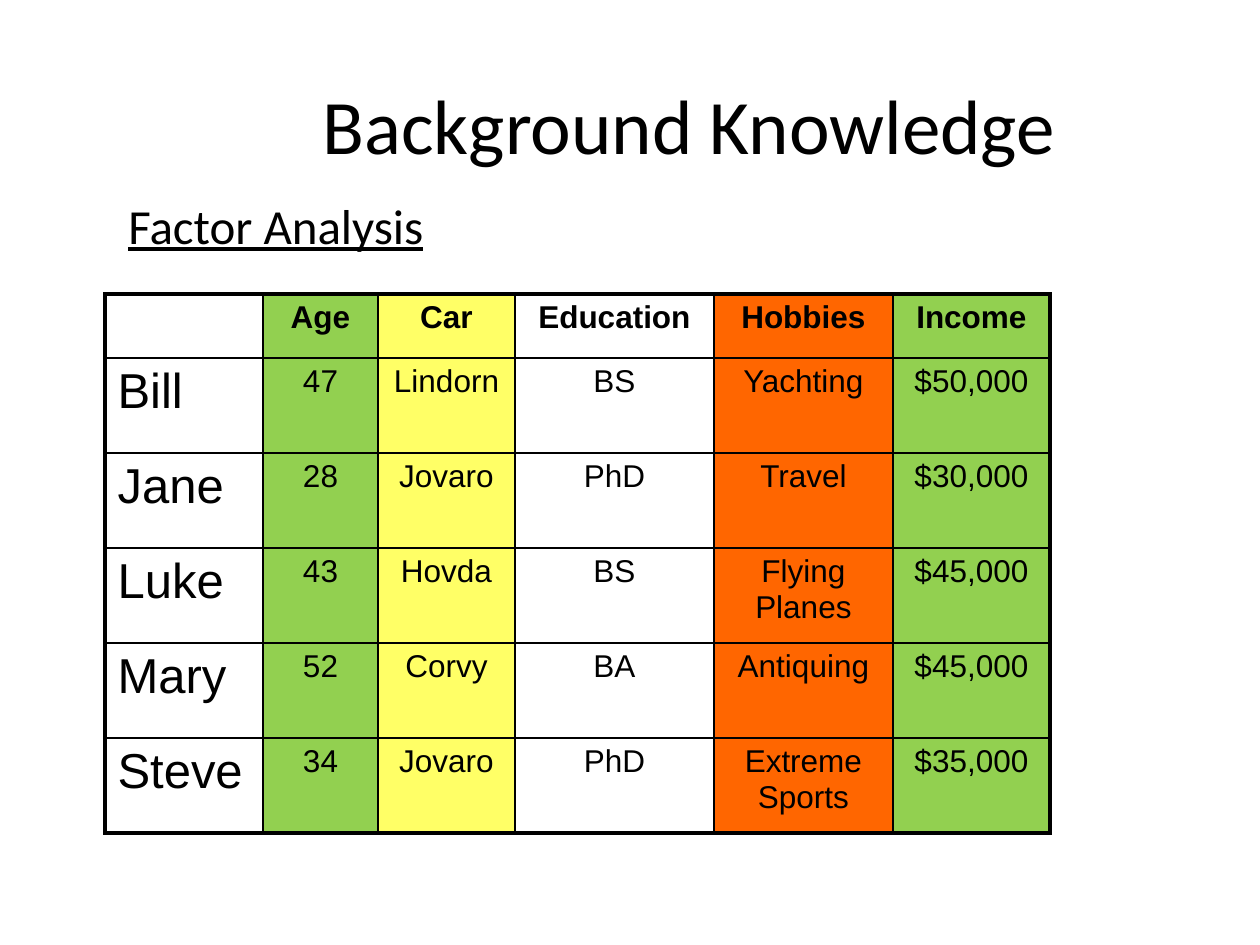
from lxml.etree import SubElement
from pptx import Presentation
from pptx.dml.color import RGBColor
from pptx.enum.text import MSO_ANCHOR, PP_ALIGN
from pptx.oxml.ns import qn
from pptx.util import Pt

# Content
TITLE = "Background Knowledge "
SUBTITLE = "Factor Analysis"
PEOPLE = [
    ("", "Age", "Car", "Education", "Hobbies", "Income"),
    ("Bill", "47", "Lindorn", "BS", "Yachting", "$50,000"),
    ("Jane", "28", "Jovaro", "PhD", "Travel", "$30,000"),
    ("Luke", "43", "Hovda", "BS", "Flying Planes", "$45,000"),
    ("Mary", "52", "Corvy", "BA", "Antiquing", "$45,000"),
    ("Steve", "34", "Jovaro", "PhD", "Extreme Sports", "$35,000"),
]
COLORS = {"black": "000000", "white": "FFFFFF", "green": "92D050",
          "yellow": "FFFF66", "orange": "FF6600"}
COLUMN_FILLS = ["white", "green", "yellow", "white", "orange", "green"]

# Geometry in px
PX = 914400 / 126
COLUMN_WIDTHS = [158, 115, 137, 199, 179, 157]
ROW_HEIGHTS = [64] + [95] * (len(PEOPLE) - 1)
OUTER, INNER = Pt(2.25), Pt(1)


def emu(*lengths):
    return [round(length * PX) for length in lengths]


def write(paragraph, text, size, font, align, bold=False, underline=False):
    paragraph.alignment = align
    run = paragraph.add_run()
    run.text = text
    run.font.size = Pt(size)
    run.font.name = font
    run.font.bold = bold
    run.font.underline = underline
    run.font.color.rgb = RGBColor.from_string(COLORS["black"])


def add_borders(cell, widths):
    properties = cell._tc.get_or_add_tcPr()
    for side, width in widths.items():
        line = SubElement(properties, qn(f"a:ln{side}"), w=str(width))
        fill = SubElement(line, qn("a:solidFill"))
        SubElement(fill, qn("a:srgbClr"), val=COLORS["black"])


presentation = Presentation()
presentation.slide_width, presentation.slide_height = emu(1260, 945)
slide = presentation.slides.add_slide(presentation.slide_layouts[5])

# Title
title = slide.shapes.title
title.left, title.top, title.width, title.height = emu(199, 53, 998, 142)
title.text_frame.vertical_anchor = MSO_ANCHOR.MIDDLE
write(title.text_frame.paragraphs[0], TITLE, 44, "Calibri", PP_ALIGN.CENTER)

# Subtitle
subtitle = slide.shapes.add_textbox(*emu(116, 189, 924, 73))
subtitle.text_frame.word_wrap = True
write(subtitle.text_frame.paragraphs[0], SUBTITLE, 28, "Calibri",
      PP_ALIGN.LEFT, underline=True)

# Table of people and their factors
last_row, last_column = len(PEOPLE) - 1, len(COLUMN_WIDTHS) - 1
table = slide.shapes.add_table(
    len(PEOPLE), len(COLUMN_WIDTHS),
    *emu(105, 294, sum(COLUMN_WIDTHS), sum(ROW_HEIGHTS))).table
table.first_row = table.horz_banding = False
for column, width in zip(table.columns, emu(*COLUMN_WIDTHS)):
    column.width = width
for row, height in zip(table.rows, emu(*ROW_HEIGHTS)):
    row.height = height

for r, person in enumerate(PEOPLE):
    for c, text in enumerate(person):
        cell = table.cell(r, c)
        add_borders(cell, {
            "L": OUTER if c == 0 else INNER,
            "R": OUTER if c == last_column else INNER,
            "T": OUTER if r == 0 else INNER,
            "B": OUTER if r == last_row else INNER,
        })
        cell.fill.solid()
        cell.fill.fore_color.rgb = RGBColor.from_string(COLORS[COLUMN_FILLS[c]])
        if text:
            size, align = (18, PP_ALIGN.CENTER) if c else (28, PP_ALIGN.LEFT)
            write(cell.text_frame.paragraphs[0], text, size, "Arial", align,
                  bold=r == 0)

presentation.save("out.pptx")
